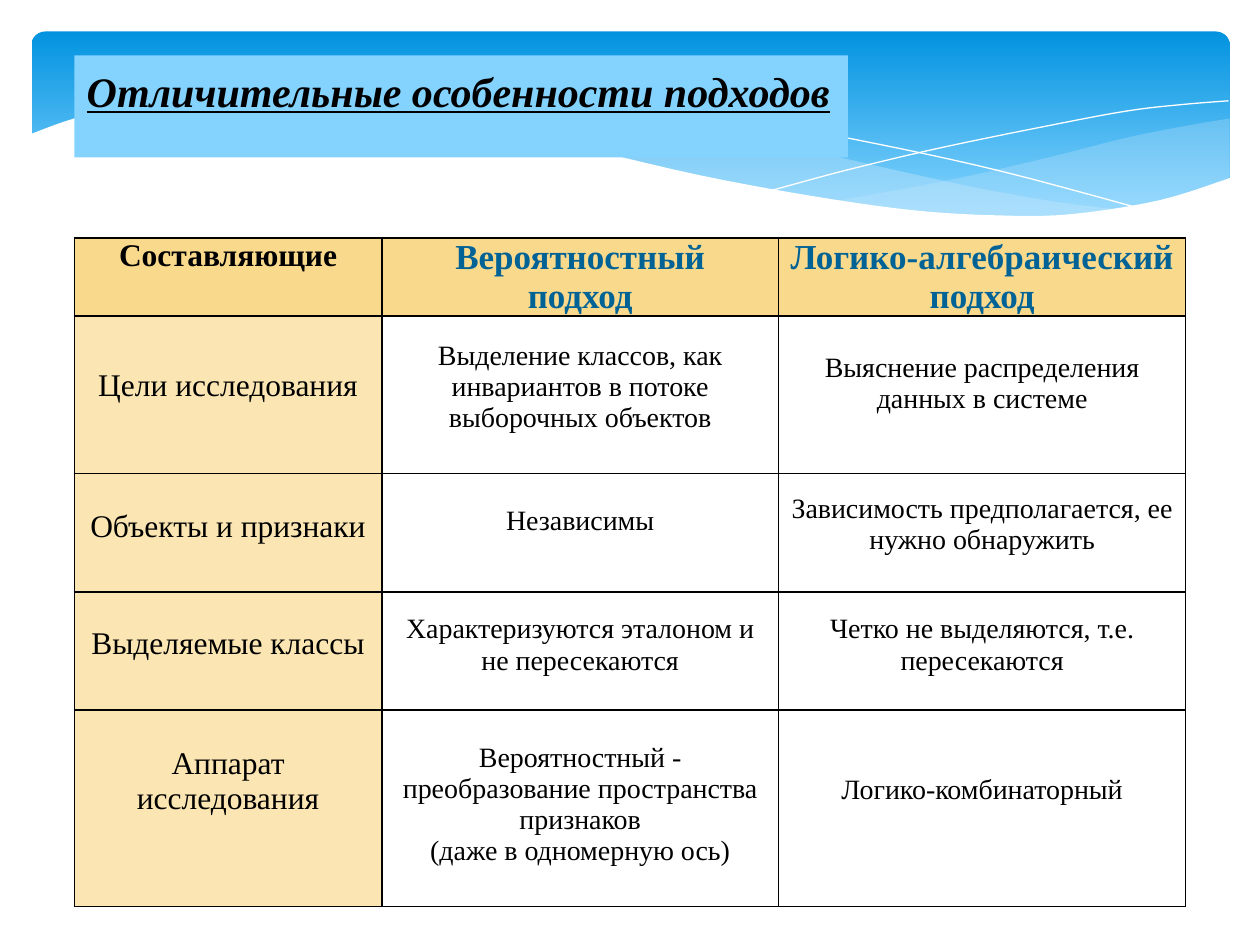
from lxml.etree import SubElement
from pptx import Presentation
from pptx.dml.color import RGBColor
from pptx.enum.shapes import MSO_SHAPE
from pptx.enum.text import MSO_ANCHOR, PP_ALIGN
from pptx.oxml.ns import qn
from pptx.util import Inches, Pt

COLORS = {
    "sky_dark": "0293E0", "sky": "83D3FE", "mist": "C6E7FC", "white": "FFFFFF",
    "black": "000000", "blue": "016296", "head": "F9D98C", "side": "FBE6B3",
}
FONT = "Times New Roman"
LINE_HEIGHT = 1.15

deck = Presentation()
deck.slide_width, deck.slide_height = Inches(10), Inches(7.5)
page = deck.slides.add_slide(deck.slide_layouts[6])


def smooth(knots, steps=5):
    """Points of a Catmull-Rom curve through the knots."""
    padded = [knots[0], *knots, knots[-1]]
    points = [knots[0]]
    for a, b, c, d in zip(padded, padded[1:], padded[2:], padded[3:]):
        for step in range(1, steps + 1):
            t = step / steps
            points.append(tuple(
                (2 * q + (r - p) * t + (2 * p - 5 * q + 4 * r - s) * t ** 2
                 + (3 * q - p - 3 * r + s) * t ** 3) / 2
                for p, q, r, s in zip(a, b, c, d)))
    return points


def write(para, text, color, align, **format_values):
    para.alignment = align
    span = para.add_run()
    span.text = text
    span.font.color.rgb = RGBColor.from_string(COLORS[color])
    for name, value in {"name": FONT, **format_values}.items():
        setattr(span.font, name, value)


# Gradient banner
banner = page.shapes.add_shape(
    MSO_SHAPE.ROUNDED_RECTANGLE, Inches(0.25), Inches(0.25), Inches(9.51), Inches(1.56))
banner.adjustments[0] = 0.07
banner.shadow.inherit = False
banner.line.fill.background()
banner.fill.gradient()
banner.fill.gradient_angle = 270
for stop, position, color in zip(banner.fill.gradient_stops, (0, 0.9), ("sky_dark", "sky")):
    stop.position = position
    stop.color.rgb = RGBColor.from_string(COLORS[color])

# Waves: curved sides, fill colour (None for a white line), opacity in percent
waves = [
    ([[(9.76, 0.94), (9.35, 1.01), (8.91, 1.1), (8.32, 1.25), (7.53, 1.43), (6.61, 1.6)],
      [(6.61, 1.6), (7.05, 1.65), (7.57, 1.7), (8.03, 1.72), (8.54, 1.7), (9.05, 1.63),
       (9.42, 1.54), (9.76, 1.41)]], "mist", 29),
    ([[(8.93, 1.67), (8.37, 1.6), (7.75, 1.49), (7.06, 1.34), (6.29, 1.16), (5.69, 1.02),
       (5.14, 0.92), (4.42, 0.83), (3.8, 0.8), (3.28, 0.81), (2.86, 0.86)],
      [(2.86, 0.86), (3.62, 0.97), (4.49, 1.16), (5.66, 1.43), (6.5, 1.58), (7.22, 1.68),
       (7.85, 1.72), (8.38, 1.72), (8.93, 1.67)]], "mist", 40),
    ([[(3.09, 0.9), (3.44, 0.84), (4.01, 0.81), (4.69, 0.83), (5.33, 0.88), (6.08, 0.98),
       (6.95, 1.14), (7.95, 1.36), (9.07, 1.66)]], None, 100),
    ([[(6.13, 1.51), (6.72, 1.35), (7.48, 1.17), (8.36, 0.99), (8.95, 0.88),
       (9.38, 0.83), (9.75, 0.8)]], None, 100),
    ([[(9.77, 1.41), (9.2, 1.59), (8.5, 1.7), (7.93, 1.71), (7.26, 1.67), (6.47, 1.56),
       (5.55, 1.39), (4.47, 1.14), (3.39, 0.92), (2.5, 0.81), (1.77, 0.78), (1.06, 0.83),
       (0.59, 0.94), (0.23, 1.07)], [(0.23, 2.24), (9.77, 2.24)]], "white", 100),
]
for sides, color, opacity in waves:
    points = [(Inches(x), Inches(y)) for side in sides for x, y in smooth(side)]
    builder = page.shapes.build_freeform(*points[0])
    builder.add_line_segments(points[1:], close=color is not None)
    wave = builder.convert_to_shape()
    wave.shadow.inherit = False
    if color is None:
        wave.fill.background()
        wave.line.color.rgb = RGBColor.from_string(COLORS["white"])
        wave.line.width = Pt(0)
        continue
    wave.line.fill.background()
    wave.fill.solid()
    wave.fill.fore_color.rgb = RGBColor.from_string(COLORS[color])
    if opacity < 100:
        tint = wave.fill._xPr.find(qn("a:solidFill"))[0]
        SubElement(tint, qn("a:alpha"), val=str(opacity * 1000))

# Table rows: height, then (blank points above the text, text) for each column
rows = [
    (0.59, [(0, "Составляющие"), (0, "Вероятностный\nподход"),
            (0, "Логико-алгебраический подход")]),
    (1.25, [(26, "Цели исследования"),
            (12, "Выделение классов, как инвариантов в потоке выборочных объектов"),
            (18, "Выяснение распределения данных в системе")]),
    (0.94, [(18, "Объекты и признаки"), (16, "Независимы"),
            (10, "Зависимость предполагается, ее нужно обнаружить")]),
    (0.94, [(17, "Выделяемые классы"),
            (11, "Характеризуются эталоном и не пересекаются"),
            (11, "Четко не выделяются, т.е. пересекаются")]),
    (1.56, [(18, "Аппарат исследования"),
            (16, "Вероятностный - преобразование пространства признаков\n"
                 "(даже в одномерную ось)"),
            (32, "Логико-комбинаторный")]),
]
widths = [2.44, 3.15, 3.23]
frame = page.shapes.add_table(
    len(rows), len(widths), Inches(0.59), Inches(1.89),
    Inches(sum(widths)), Inches(sum(height for height, _ in rows)))
table = frame.table
table.horz_banding = False
for column, width in zip(table.columns, widths):
    column.width = Inches(width)

for row_index, (height, entries) in enumerate(rows):
    table.rows[row_index].height = Inches(height)
    for column_index, (gap, text) in enumerate(entries):
        cell = table.cell(row_index, column_index)
        is_head, is_side = row_index == 0, column_index == 0
        margins = {"margin_left": Inches(0.07), "margin_right": Inches(0.07),
                   "margin_top": Pt(gap * LINE_HEIGHT), "margin_bottom": 0}
        for name, value in margins.items():
            setattr(cell, name, value)

        # Borders go before the fill in the cell properties
        properties = cell._tc.get_or_add_tcPr()
        for edge in ("a:lnL", "a:lnR", "a:lnT", "a:lnB"):
            border = SubElement(properties, qn(edge), w=str(Pt(1)))
            SubElement(SubElement(border, qn("a:solidFill")), qn("a:srgbClr"),
                       val=COLORS["black"])
        cell.fill.solid()
        fill = "head" if is_head else "side" if is_side else "white"
        cell.fill.fore_color.rgb = RGBColor.from_string(COLORS[fill])

        size = 18 if is_side else 20 if is_head else 16
        color = "blue" if is_head and not is_side else "black"
        for index, line in enumerate(text.split("\n")):
            paras = cell.text_frame
            para = paras.add_paragraph() if index else paras.paragraphs[0]
            write(para, line, color, PP_ALIGN.CENTER, size=Pt(size), bold=is_head)

# Title
title = page.shapes.add_shape(
    MSO_SHAPE.RECTANGLE, Inches(0.59), Inches(0.44), Inches(6.14), Inches(0.81))
title.shadow.inherit = False
title.line.fill.background()
title.fill.solid()
title.fill.fore_color.rgb = RGBColor.from_string(COLORS["sky"])
title_format = {"word_wrap": True, "vertical_anchor": MSO_ANCHOR.TOP,
                "margin_top": Inches(0.08)}
for name, value in title_format.items():
    setattr(title.text_frame, name, value)
write(title.text_frame.paragraphs[0], "Отличительные особенности подходов", "black",
      PP_ALIGN.LEFT, size=Pt(24), bold=True, italic=True, underline=True)

deck.save("out.pptx")
